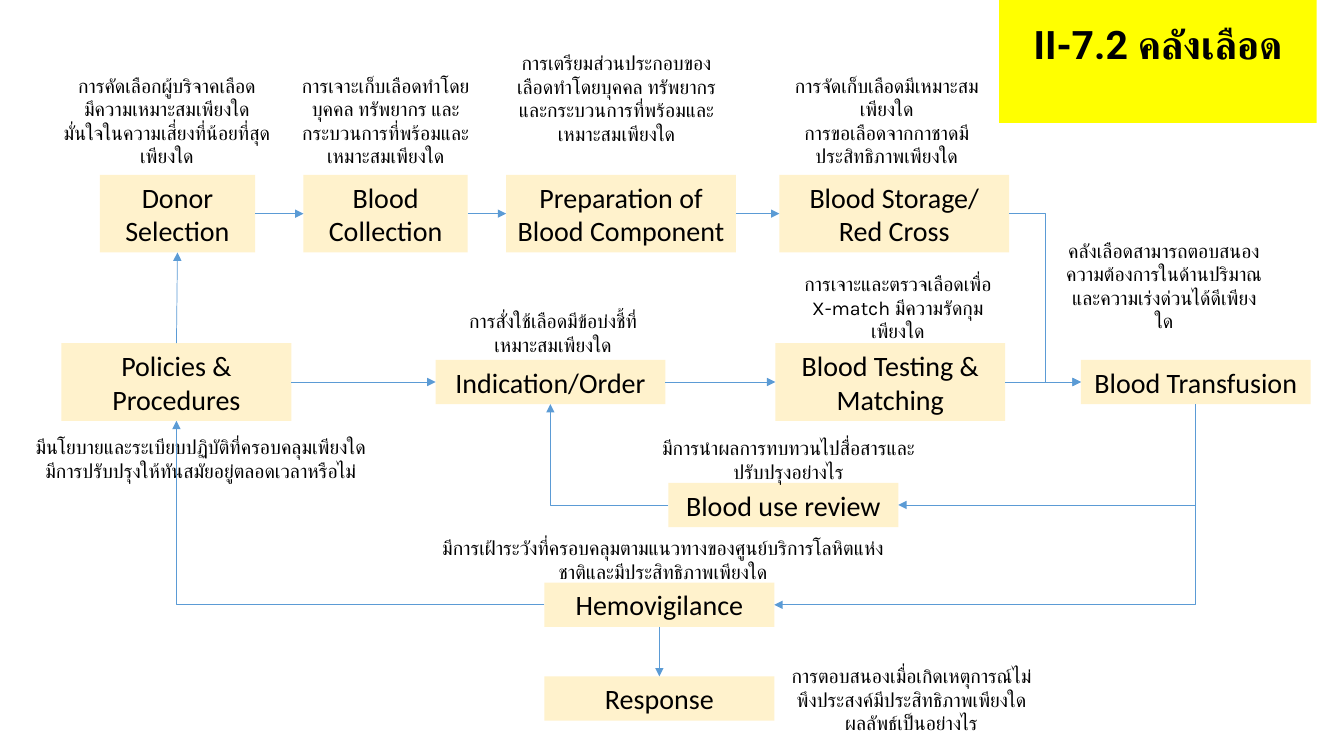
from dataclasses import dataclass
from lxml import etree
from pptx import Presentation
from pptx import util as u
from pptx.dml.color import RGBColor
from pptx.enum import shapes, text
from pptx.oxml import ns


@dataclass(frozen=True)
class Theme:
    ink: str = "000000"
    box: str = "FFF2CC"
    band: str = "FFFF00"
    line: str = "5B9BD5"
    head: str = "Roboto"
    body: str = "Calibri"
    note: str = "Karla"
    big: int = 28
    mid: int = 20
    small: int = 14
    thin: float = 0.5


T = Theme()
UNIT = u.Inches(0.1)
WIDE, TALL, LOW = 22.8, 7.7, 4.4
NOTE = 21.7
TOP, LEFT, BOTTOM, RIGHT = range(4)


def grid(*cells):
    return [round(c * UNIT) for c in cells]


def paint(shape, color):
    shape.fill.solid()
    shape.fill.fore_color.rgb = RGBColor.from_string(color)


def write(shape, words, font=T.body, size=T.mid, bold=False,
          anchor=text.MSO_ANCHOR.MIDDLE):
    frame = shape.text_frame
    frame.word_wrap = True
    frame.auto_size = text.MSO_AUTO_SIZE.SHAPE_TO_FIT_TEXT
    frame.vertical_anchor = anchor
    frame.text = words
    for para in frame.paragraphs:
        para.alignment = text.PP_ALIGN.CENTER
        for run in para.runs:
            run.font.name = font
            run.font.size = u.Pt(size)
            run.font.bold = bold
            run.font.color.rgb = RGBColor.from_string(T.ink)
            face = etree.SubElement(run.font._element, ns.qn("a:cs"))
            face.set("typeface", font)


def block(slide, words, x, mid, wide=WIDE, high=TALL):
    shape = slide.shapes.add_shape(
        shapes.MSO_SHAPE.RECTANGLE, *grid(x, mid - high / 2, wide, high))
    shape.shadow.inherit = False
    shape.line.fill.background()
    paint(shape, T.box)
    write(shape, words)
    return shape


def note(slide, words, x, y, wide=NOTE, high=5.7):
    shape = slide.shapes.add_textbox(*grid(x, y, wide, high))
    write(shape, words, font=T.note, size=T.small,
          anchor=text.MSO_ANCHOR.TOP)


def link(slide, start, out, end, into, kind="line"):
    form = shapes.MSO_CONNECTOR
    line = slide.shapes.add_connector(
        form.STRAIGHT if kind == "line" else form.ELBOW, 0, 0, 0, 0)
    line.begin_connect(start, out)
    line.end_connect(end, into)
    line.line.width = u.Pt(T.thin)
    line.line.color.rgb = RGBColor.from_string(T.line)
    props = line._element.spPr
    tip = etree.SubElement(line.line._get_or_add_ln(), ns.qn("a:tailEnd"))
    tip.set("type", "triangle")
    etree.SubElement(props, ns.qn("a:effectLst"))
    if kind == "corner":
        props.find(ns.qn("a:prstGeom")).set("prst", "bentConnector2")
        if out == BOTTOM:
            turn(line, props)


def turn(line, props):
    x, y, wide, high = line.left, line.top, line.width, line.height
    frame = props.find(ns.qn("a:xfrm"))
    frame.attrib.pop("flipH", None)
    frame.attrib.pop("flipV", None)
    frame.set("rot", str(90 * 60000))
    line.left, line.top = x + (wide - high) // 2, y + (high - wide) // 2
    line.width, line.height = high, wide


def chain(slide, *row):
    for start, end in zip(row, row[1:]):
        link(slide, start, RIGHT, end, LEFT)


def title(slide, x, y, wide, high):
    shape = slide.shapes.title
    shape.left, shape.top, shape.width, shape.height = grid(x, y, wide, high)
    paint(shape, T.band)
    write(shape, "II-7.2 คลังเลือด", font=T.head, size=T.big, bold=True)


def supply(slide, x, mid):
    donor = block(slide, "Donor Selection", x, mid, 15.4)
    draw = block(slide, "Blood Collection", x + 20.2, mid, 16.3)
    prep = block(slide, "Preparation of Blood Component", x + 40.3, mid)
    store = block(slide, "Blood Storage/\nRed Cross", x + 67.4, mid)
    chain(slide, donor, draw, prep, store)
    y = mid - 14.4
    note(slide, "การคัดเลือกผู้บริจาคเลือด\nมึความเหมาะสมเพียงใด\n"
         "มั่นใจในความเสี่ยงที่น้อยที่สุดเพียงใด", x - 5.8, y, 24.9, 10.4)
    note(slide, "การเจาะเก็บเลือดทำโดยบุคคล ทรัพยากร "
         "และกระบวนการที่พร้อมและเหมาะสมเพียงใด", x + 17.5, y, high=10.4)
    note(slide, "การเตรียมส่วนประกอบของเลือดทำโดยบุคคล ทรัพยากร "
         "และกระบวนการที่พร้อมและเหมาะสมเพียงใด", x + 40.4, y - 2.2, high=12.8)
    note(slide, "การจัดเก็บเลือดมีเหมาะสมเพียงใด\n"
         "การขอเลือดจากกาชาดมีประสิทธิภาพเพียงใด", x + 67.2, y, high=10.4)
    return donor, store


def usage(slide, x, mid):
    rule = block(slide, "Policies & Procedures", x, mid)
    order = block(slide, "Indication/Order", x + 37.1, mid, high=LOW)
    test = block(slide, "Blood Testing & Matching", x + 70.8, mid)
    give = block(slide, "Blood Transfusion", x + 101.1, mid, high=LOW)
    chain(slide, rule, order, test, give)
    note(slide, "มีนโยบายและระเบียบปฏิบัติที่ครอบคลุมเพียงใด\n"
         "มีการปรับปรุงให้ทันสมัยอยู่ตลอดเวลาหรือไม่", x - 6.1, mid + 4.8, 39.8)
    note(slide, "การสั่งใช้เลือดมีข้อบ่งชี้ที่เหมาะสมเพียงใด",
         x + 37.9, mid - 7.7)
    note(slide, "การเจาะและตรวจเลือดเพื่อ X-match มีความรัดกุมเพียงใด",
         x + 72.1, mid - 11.4, high=8.1)
    note(slide, "คลังเลือดสามารถตอบสนองความต้องการในด้านปริมาณ"
         "และความเร่งด่วนได้ดีเพียงใด", x + 98.5, mid - 14.7, high=10.4)
    return rule, order, give


def review(slide, x, mid):
    check = block(slide, "Blood use review", x + 12.3, mid, high=LOW)
    watch = block(slide, "Hemovigilance", x, mid + 9.9, high=LOW)
    reply = block(slide, "Response", x, mid + 19.2, high=LOW)
    link(slide, watch, BOTTOM, reply, TOP)
    note(slide, "มีการนำผลการทบทวนไปสื่อสารและปรับปรุงอย่างไร",
         x + 10.3, mid - 7.3, 27.8)
    note(slide, "มีการเฝ้าระวังที่ครอบคลุมตามแนวทางของศูนย์บริการโลหิตแห่งชาติ"
         "และมีประสิทธิภาพเพียงใด", x - 11.7, mid + 2.6, 46.9)
    note(slide, "การตอบสนองเมื่อเกิดเหตุการณ์ไม่พึงประสงค์มีประสิทธิภาพเพียงใด "
         "ผลลัพธ์เป็นอย่างไร", x + 22.8, mid + 15.3, 27.2, 8.1)
    return check, watch


def main():
    deck = Presentation()
    deck.slide_width, deck.slide_height = u.Inches(13.33), u.Inches(7.5)
    slide = deck.slides.add_slide(deck.slide_layouts[5])
    title(slide, 99.1, 1.5, 31.5, 5.7)
    donor, store = supply(slide, 9.9, 21.2)
    rule, order, give = usage(slide, 6.1, 37.9)
    check, watch = review(slide, 54, 50.1)
    link(slide, rule, TOP, donor, BOTTOM)
    link(slide, store, RIGHT, give, LEFT, "elbow")
    for stop in (check, watch):
        link(slide, give, BOTTOM, stop, RIGHT, "corner")
    link(slide, check, LEFT, order, BOTTOM, "corner")
    link(slide, watch, LEFT, rule, BOTTOM, "corner")
    deck.save("out.pptx")


if __name__ == "__main__":
    main()
